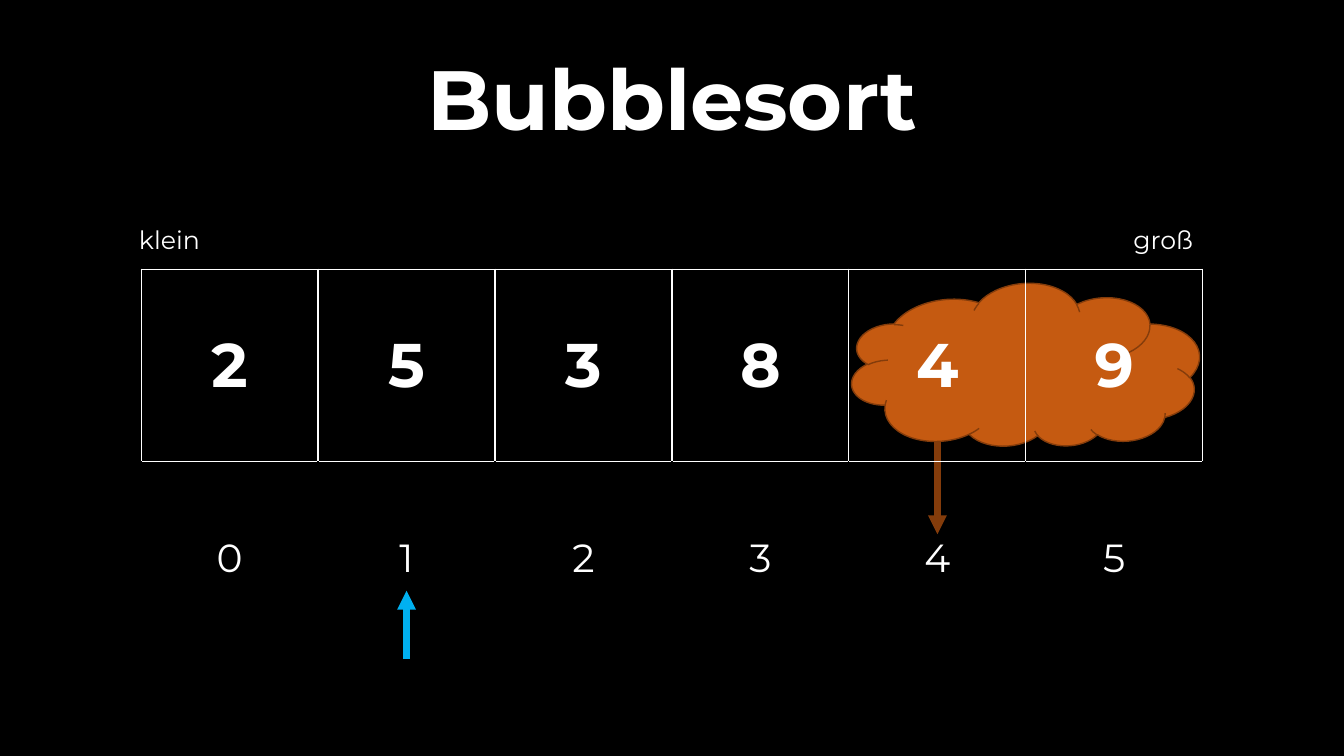
from lxml.etree import SubElement
from pptx import Presentation
from pptx.dml.color import RGBColor
from pptx.enum.shapes import MSO_CONNECTOR as Connector, MSO_SHAPE as Shape
from pptx.enum.text import MSO_ANCHOR as Anchor, MSO_AUTO_SIZE as AutoSize, PP_ALIGN as Align
from pptx.oxml.ns import qn
from pptx.util import Inches, Pt

FONT = "Montserrat"
WHITE, BLACK, BLUE = "FFFFFF", "000000", "00B0F0"
ORANGE, BROWN = "C55A11", "843C0B"
LEFT, TOP, COLUMN, ROW = 1.4, 2.67, 10.53 / 6, 1.91
NUMBERS = [2, 5, 3, 8, 4, 9]


def color(value):
    return RGBColor.from_string(value)


def column_x(position):
    return LEFT + position * COLUMN


def write(frame, text, size, align, bold=False):
    para = frame.paragraphs[0]
    para.alignment = align
    span = para.add_run()
    span.text = text
    span.font.name = FONT
    span.font.size = Pt(size)
    span.font.bold = bold
    span.font.color.rgb = color(WHITE)
    return para


def add_title(page, text):
    title = page.shapes.title
    title.left, title.top = Inches(0.15), Inches(0.31)
    title.width, title.height = Inches(13.03), Inches(1.42)
    frame = title.text_frame
    frame.auto_size = AutoSize.NONE
    frame.vertical_anchor = Anchor.MIDDLE
    para = write(frame, text, 60, Align.CENTER, True)
    para.line_spacing = 0.9
    para.space_before = Pt(10)


def add_label(page, text, left, align):
    box = page.shapes.add_textbox(Inches(left), Inches(2.18), Inches(1.51), Inches(0.4))
    box.text_frame.word_wrap = True
    box.text_frame.auto_size = AutoSize.SHAPE_TO_FIT_TEXT
    write(box.text_frame, text, 18, align)


def add_arrow(page, x, start, end, line_color):
    arrow = page.shapes.add_connector(
        Connector.STRAIGHT, Inches(x), Inches(start), Inches(x), Inches(end))
    arrow.line.color.rgb = color(line_color)
    arrow.line.width = Pt(4.5)
    SubElement(arrow.line._get_or_add_ln(), qn("a:tailEnd"), type="triangle")
    SubElement(arrow._element.spPr, qn("a:effectLst"))


def add_cloud(page):
    cloud = page.shapes.add_shape(
        Shape.CLOUD, Inches(8.44), Inches(2.82), Inches(3.46), Inches(1.64))
    cloud.shadow.inherit = False
    cloud.rotation = 355.5
    cloud._element.spPr.find(qn("a:xfrm")).set("flipV", "1")
    cloud.fill.solid()
    cloud.fill.fore_color.rgb = color(ORANGE)
    cloud.line.color.rgb = color(BROWN)
    cloud.line.width = Pt(1)


def set_borders(cell, **sides):
    properties = cell._tc.get_or_add_tcPr()
    for side in "LRTB":
        line = SubElement(properties, qn(f"a:ln{side}"), w=str(Pt(1)))
        fill = SubElement(line, qn("a:solidFill"))
        SubElement(fill, qn("a:srgbClr"), val=sides.get(side, WHITE))


def add_array(page, numbers):
    count = len(numbers)
    table = page.shapes.add_table(
        2, count, Inches(LEFT), Inches(TOP), Inches(count * COLUMN), Inches(2 * ROW)).table
    table.first_row = False
    table.horz_banding = False
    rows = [
        (numbers, 44, True, {}),
        (range(count), 28, False, {"L": BLACK, "R": BLACK, "B": BLACK}),
    ]
    for row, (values, size, bold, borders) in enumerate(rows):
        for column, value in enumerate(values):
            cell = table.cell(row, column)
            set_borders(cell, **borders)
            cell.fill.background()
            cell.vertical_anchor = Anchor.MIDDLE
            write(cell.text_frame, str(value), size, Align.CENTER, bold)


def main():
    deck = Presentation()
    deck.slide_width, deck.slide_height = Inches(13.33), Inches(7.5)
    page = deck.slides.add_slide(deck.slide_layouts[5])
    page.background.fill.solid()
    page.background.fill.fore_color.rgb = color(BLACK)

    add_title(page, "Bubblesort")
    add_arrow(page, column_x(4.5), 3.92, 5.3, BROWN)
    add_cloud(page)
    add_array(page, NUMBERS)
    add_label(page, "klein", 1.28, Align.LEFT)
    add_label(page, "groß", 10.42, Align.RIGHT)
    add_arrow(page, column_x(1.5), 6.54, 5.86, BLUE)
    deck.save("out.pptx")


if __name__ == "__main__":
    main()
